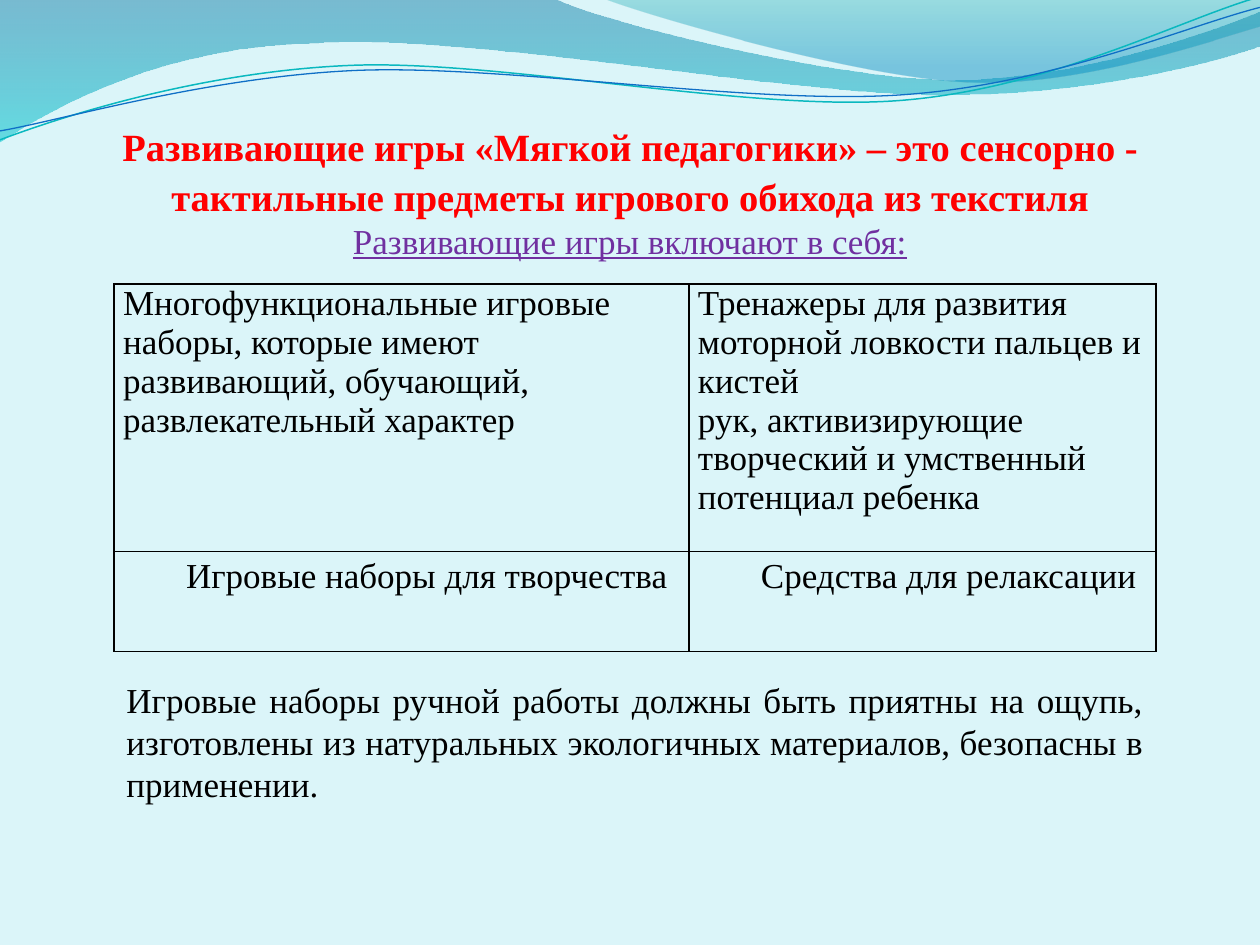
"""Build a slide on developmental textile games: heading, table and closing note."""
from dataclasses import dataclass

from lxml import etree
from pptx import Presentation
from pptx import util as u
from pptx.dml.color import RGBColor
from pptx.enum import text
from pptx.oxml.ns import qn


@dataclass(frozen=True)
class Theme:
    serif: str = "Times New Roman"
    sans: str = "Arial"
    background: str = "DBF5F9"
    ink: str = "000000"
    heading: str = "FF0000"
    subheading: str = "7030A0"
    heading_size: int = 22
    gap_size: int = 24
    body_size: int = 20


THEME = Theme()

HEADING_RUNS = [
    ("Развивающие игры «Мягкой педагогики» – это сенсорно - тактильные предметы "
     "игрового обихода из текстиля",
     dict(size=THEME.heading_size, color=THEME.heading, bold=True)),
    (" ", dict(size=THEME.gap_size, font=THEME.sans)),
    ("Развивающие игры включают в себя:", dict(color=THEME.subheading, underline=True)),
]
TABLE_ROWS = [
    dict(height=5.39, spacing=1.0, indent=0, cells=[
        ["Многофункциональные игровые наборы, которые имеют развивающий, "
         "обучающий, развлекательный характер"],
        ["Тренажеры для развития моторной ловкости пальцев и кистей",
         "рук, активизирующие творческий и умственный потенциал ребенка"],
    ]),
    dict(height=2.01, spacing=1.15, indent=1.27, cells=[
        ["Игровые наборы для творчества"],
        ["Средства для релаксации"],
    ]),
]
COLUMN_WIDTHS = [11.59, 9.41]
NOTE = ("Игровые наборы ручной работы должны быть приятны на ощупь, изготовлены "
        "из натуральных экологичных материалов, безопасны в применении.")

# Each step holds one end point for a line, or two handles and an end point for a curve.
WAVES = [
    dict(start=(0, 0), steps=[
        [(11.18, -0.03)],
        [(12.09, 0.43), (16.87, 1.6), (19.25, 1.6)],
        [(21.67, 1.6), (24.33, 0.66), (25.4, 0.23)],
        [(25.43, 0.91)],
        [(24.97, 1.12), (22.1, 1.93), (18.95, 1.91)],
        [(15.8, 1.91), (9.7, 0.71), (6.53, 0.86)],
        [(3.28, 0.91), (1.17, 2.11), (-0.03, 2.87)],
    ], stops=[(0, "0074A1", 45), (1, "00C6CF", 55)]),
    dict(start=(12.17, -0.03), steps=[
        [(12.93, 0.28), (17.32, 1.57), (19.53, 1.65)],
        [(21.74, 1.75), (24.41, 0.81), (25.4, 0.53)],
        [(25.4, 0)],
    ], stops=[(0, "00A1A9", 30), (0.8, "008BBF", 45)]),
    dict(start=(0, 2.82), steps=[
        [(1.22, 2.36), (4.01, 1.45), (7.04, 1.32)],
        [(10.03, 1.19), (15.06, 2.26), (18.11, 2.03)],
        [(21.16, 1.8), (23.83, 0.38), (25.35, -0.05)],
    ], line=("0AB8BF", 0.85)),
    dict(start=(0, 2.64), steps=[
        [(1.19, 2.44), (4.17, 1.55), (7.19, 1.42)],
        [(10.24, 1.3), (15.16, 2.13), (18.21, 1.91)],
        [(21.23, 1.7), (23.9, 0.53), (25.4, 0.15)],
    ], line=("0F6FC6", 0.75)),
]


def rgb(value):
    return RGBColor.from_string(value)


def bend_segments(shape, steps):
    segments = list(shape._element.iter(qn("a:lnTo")))
    for segment, step in zip(segments, steps):
        if len(step) == 1:
            continue
        segment.tag = qn("a:cubicBezTo")
        for index, (x, y) in enumerate(step[:2]):
            handle = etree.Element(qn("a:pt"), x=str(u.Cm(x) - shape.left),
                                   y=str(u.Cm(y) - shape.top))
            segment.insert(index, handle)


def add_wave(slide, start, steps, stops=None, line=None):
    builder = slide.shapes.build_freeform(*map(u.Cm, start))
    ends = [tuple(map(u.Cm, step[-1])) for step in steps]
    builder.add_line_segments(ends, close=bool(stops))
    shape = builder.convert_to_shape()
    bend_segments(shape, steps)
    shape.shadow.inherit = False
    if line:
        shape.fill.background()
        shape.line.color.rgb = rgb(line[0])
        shape.line.width = u.Pt(line[1])
        return
    shape.line.fill.background()
    shape.fill.gradient()
    shape.fill.gradient_angle = 270
    for stop, (position, color, _) in zip(shape.fill.gradient_stops, stops):
        stop.position = position
        stop.color.rgb = rgb(color)
    for element, (_, _, opacity) in zip(shape._element.iter(qn("a:srgbClr")), stops):
        etree.SubElement(element, qn("a:alpha"), val=str(opacity * 1000))


def add_run(paragraph, words, size=THEME.body_size, color=THEME.ink,
            font=THEME.serif, bold=False, underline=False):
    run = paragraph.add_run()
    run.text = words
    run.font.name, run.font.size = font, u.Pt(size)
    run.font.color.rgb = rgb(color)
    run.font.bold, run.font.underline = bold, underline


def add_text(slide, box, runs, align, anchor, top_margin=0.13):
    frame = slide.shapes.add_textbox(*map(u.Cm, box)).text_frame
    frame.word_wrap = True
    frame.vertical_anchor = anchor
    frame.margin_top = u.Cm(top_margin)
    paragraph = frame.paragraphs[0]
    paragraph.alignment = align
    for words, style in runs:
        add_run(paragraph, words, **style)


def add_borders(cell):
    properties = cell._tc.get_or_add_tcPr()
    for index, side in enumerate(("a:lnL", "a:lnR", "a:lnT", "a:lnB")):
        border = etree.Element(qn(side), w=str(u.Pt(1)))
        fill = etree.SubElement(border, qn("a:solidFill"))
        etree.SubElement(fill, qn("a:srgbClr"), val=THEME.ink)
        properties.insert(index, border)


def fill_cell(cell, lines, spacing, indent):
    cell.fill.background()
    cell.margin_left = cell.margin_right = u.Cm(0.18)
    cell.margin_top = cell.margin_bottom = 0
    add_borders(cell)
    frame = cell.text_frame
    for index, words in enumerate(lines):
        paragraph = frame.add_paragraph() if index else frame.paragraphs[0]
        paragraph.line_spacing = spacing
        paragraph._p.get_or_add_pPr().set("marL", str(u.Cm(indent)))
        add_run(paragraph, words)


def add_games_table(slide, left, top):
    size = sum(COLUMN_WIDTHS), sum(row["height"] for row in TABLE_ROWS)
    table = slide.shapes.add_table(len(TABLE_ROWS), len(COLUMN_WIDTHS),
                                   *map(u.Cm, (left, top, *size))).table
    table.first_row = table.horz_banding = False
    for column, width in zip(table.columns, COLUMN_WIDTHS):
        column.width = u.Cm(width)
    for row, content in zip(table.rows, TABLE_ROWS):
        row.height = u.Cm(content["height"])
        for cell, lines in zip(row.cells, content["cells"]):
            fill_cell(cell, lines, content["spacing"], content["indent"])


def main():
    presentation = Presentation()
    presentation.slide_width, presentation.slide_height = u.Cm(25.4), u.Cm(19.05)
    slide = presentation.slides.add_slide(presentation.slide_layouts[6])
    slide.background.fill.solid()
    slide.background.fill.fore_color.rgb = rgb(THEME.background)
    for wave in WAVES:
        add_wave(slide, **wave)
    add_games_table(slide, 2.3, 5.73)
    add_text(slide, (1.7, 1.32, 22, 5.89), HEADING_RUNS, text.PP_ALIGN.CENTER,
             text.MSO_ANCHOR.TOP, top_margin=1.16)
    add_text(slide, (2.3, 13.54, 21, 2.82), [(NOTE, {})], text.PP_ALIGN.JUSTIFY,
             text.MSO_ANCHOR.MIDDLE)
    presentation.save("out.pptx")


if __name__ == "__main__":
    main()
